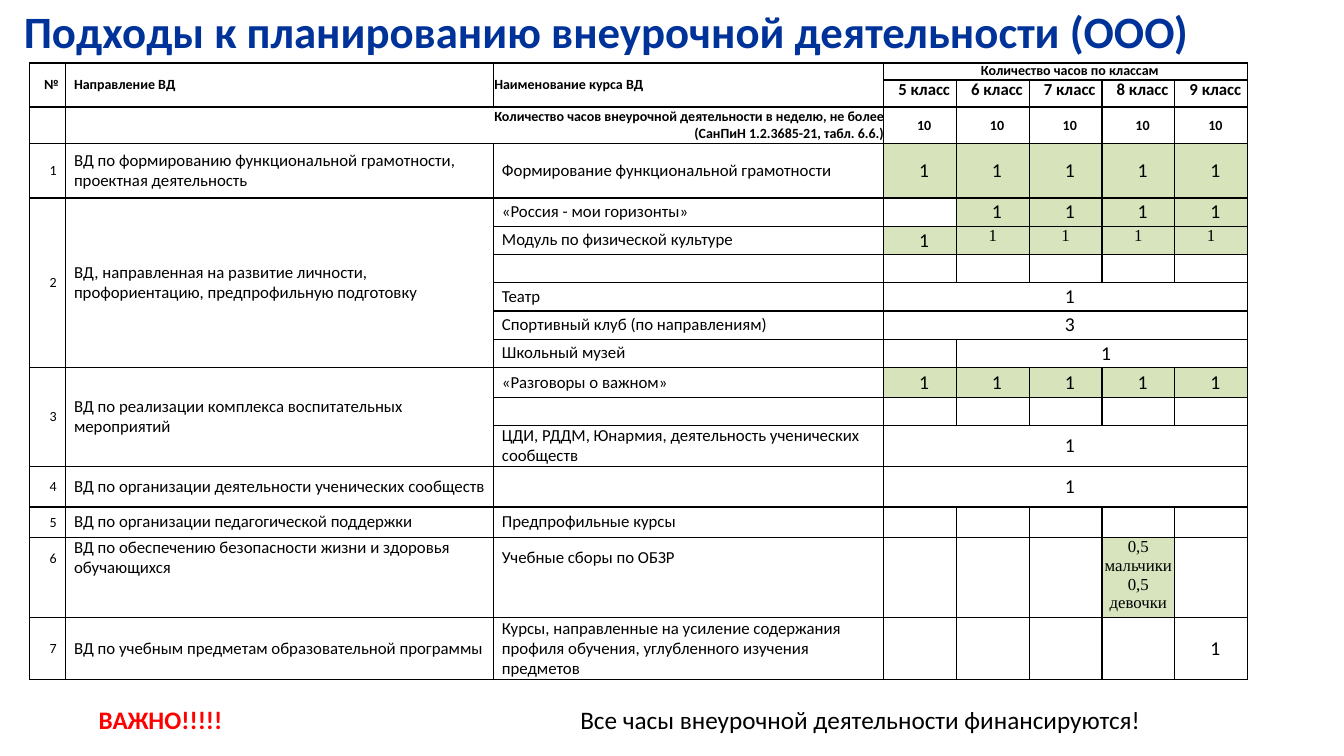
from lxml.etree import SubElement
from pptx import Presentation
from pptx.dml.color import RGBColor
from pptx.enum.text import MSO_ANCHOR as Anchor, MSO_AUTO_SIZE as Fit, PP_ALIGN as Align
from pptx.oxml.ns import qn
from pptx.util import Pt

COLORS = {"title": "003399", "text": "000000", "alert": "FF0000", "line": "000000",
          "plain": "FFFFFF", "mint": "D7E3BB", "olive": "D7E4BD"}
SERIF = "Times New Roman"
WIDTHS = [25.7, 305.7, 278.6] + [52] * 5
FIRST_GRADE = 3
HEADER_HEIGHTS = [12.2, 19.2, 26.4]
LAST = "7"
ONES = ["1"] * 5
EMPTY = [""] * 5

# height, number, direction, course, hours by class or (first class, shared hours), shade
COURSES = [
    (38.6, "1", "ВД по формированию функциональной грамотности,\nпроектная деятельность",
     "Формирование функциональной грамотности", ONES, "mint"),
    (20.2, "2", "ВД, направленная на развитие личности, профориентацию, предпрофильную подготовку",
     "«Россия - мои горизонты»", [""] + ["1"] * 4, "mint"),
    (20.2, None, None, "Модуль по физической культуре", ONES, "olive"),
    (20.2, None, None, "", EMPTY, "plain"),
    (20.2, None, None, "Театр", (0, "1"), "plain"),
    (20.2, None, None, "Спортивный клуб (по направлениям)", (0, "3"), "plain"),
    (20.2, None, None, "Школьный музей", (1, "1"), "plain"),
    (21.6, "3", "ВД по реализации комплекса воспитательных мероприятий",
     "«Разговоры о важном»", ONES, "mint"),
    (20, None, None, "", EMPTY, "plain"),
    (29.3, None, None, "ЦДИ, РДДМ, Юнармия, деятельность ученических сообществ", (0, "1"), "plain"),
    (28.8, "4", "ВД по организации деятельности ученических сообществ", "", (0, "1"), "plain"),
    (22, "5", "ВД по организации педагогической поддержки", "Предпрофильные курсы", EMPTY, "plain"),
    (57.2, "6", "ВД по обеспечению безопасности жизни и здоровья\nобучающихся",
     "Учебные сборы по ОБЗР", ["", "", "", "0,5 мальчики\n0,5 девочки", ""], "olive"),
    (44.2, LAST, "ВД по учебным предметам образовательной программы",
     "Курсы, направленные на усиление содержания профиля обучения, углубленного изучения предметов",
     [""] * 4 + ["1"], "plain"),
]


def write(frame, text, size=12, bold=False, color="text", font="Calibri",
          align=Align.LEFT, spacing=None):
    """Fill a text frame, one paragraph per line of text."""
    for index, line in enumerate(text.split("\n")):
        para = frame.add_paragraph() if index else frame.paragraphs[0]
        para.alignment = align
        if spacing:
            para.line_spacing = Pt(spacing)
        if not line:
            SubElement(para._p, qn("a:endParaRPr"), sz=str(size * 100))
            continue
        span = para.add_run()
        span.text = line
        span.font.name = font
        span.font.size = Pt(size)
        span.font.bold = bold
        span.font.color.rgb = RGBColor.from_string(COLORS[color])


class Page:
    """Holds the deck, its style and the current slide."""

    def __init__(self, width, height):
        self.deck = Presentation()
        self.deck.slide_width, self.deck.slide_height = Pt(width), Pt(height)
        self.page = self.deck.slides.add_slide(self.deck.slide_layouts[5])

    def place(self, box, left, top, width, height):
        """Move a box and remove its margins."""
        box.left, box.top, box.width, box.height = Pt(left), Pt(top), Pt(width), Pt(height)
        frame = box.text_frame
        frame.word_wrap = True
        frame.auto_size = Fit.NONE
        frame.vertical_anchor = Anchor.MIDDLE
        frame.margin_left = frame.margin_right = frame.margin_top = frame.margin_bottom = 0
        return frame

    def title(self, text, *area, **style):
        write(self.place(self.page.shapes.title, *area), text, **style)

    def label(self, text, *area, **style):
        box = self.page.shapes.add_textbox(0, 0, 0, 0)
        write(self.place(box, *area), text, **style)

    def table(self, left, top, widths, heights):
        """Add a plain ruled table."""
        frame = self.page.shapes.add_table(len(heights), len(widths), Pt(left), Pt(top),
                                           Pt(sum(widths)), Pt(sum(heights)))
        self.grid = frame.table
        self.grid.first_row = self.grid.horz_banding = False
        for column, width in zip(self.grid.columns, widths):
            column.width = Pt(width)
        for row, height in zip(self.grid.rows, heights):
            row.height = Pt(height)
        for cell in self.grid.iter_cells():
            self.rule(cell)

    def rule(self, cell):
        """Draw the four borders of a cell and clear its margins."""
        cell.margin_left = cell.margin_right = cell.margin_top = cell.margin_bottom = 0
        props = cell._tc.get_or_add_tcPr()
        for side in ("lnL", "lnR", "lnT", "lnB"):
            border = SubElement(props, qn(f"a:{side}"), w=str(Pt(1)))
            fill = SubElement(border, qn("a:solidFill"))
            SubElement(fill, qn("a:srgbClr"), val=COLORS["line"])
        cell.fill.solid()
        cell.fill.fore_color.rgb = RGBColor.from_string(COLORS["plain"])

    def cell(self, row, column, text, rows=1, columns=1, left=6, right=0, top=0,
             anchor=Anchor.MIDDLE, shade="plain", **style):
        """Write one cell, merged over rows and columns."""
        cell = self.grid.cell(row, column)
        if rows * columns > 1:
            cell.merge(self.grid.cell(row + rows - 1, column + columns - 1))
        cell.margin_left, cell.margin_right, cell.margin_top = Pt(left), Pt(right), Pt(top)
        cell.vertical_anchor = anchor
        cell.fill.fore_color.rgb = RGBColor.from_string(COLORS[shade])
        write(cell.text_frame, text, **style)


def add_header(page):
    """Write the three heading rows."""
    head = {"size": 10, "bold": True}
    page.cell(0, 0, "№", rows=2, left=0, right=5, align=Align.RIGHT, **head)
    page.cell(0, 1, "Направление ВД", rows=2, **head)
    page.cell(0, 2, "Наименование курса ВД", rows=2, left=0.5, **head)
    page.cell(0, FIRST_GRADE, "Количество часов по классам", columns=5,
              align=Align.CENTER, spacing=11.4, **head)
    page.cell(2, 0, "", size=10)
    page.cell(2, 1, "Количество часов внеурочной деятельности в неделю, не более\n"
              "(СанПиН 1.2.3685-21, табл. 6.6.)", columns=2, align=Align.RIGHT, **head)
    for grade in range(5):
        column = FIRST_GRADE + grade
        page.cell(1, column, f"{grade + 5} класс", bold=True, align=Align.CENTER,
                  anchor=Anchor.TOP, spacing=14.2)
        page.cell(2, column, "10", align=Align.CENTER, **head)


def add_hours(page, row, hours, shade):
    """Write the hours of one course."""
    if isinstance(hours, tuple):
        start, shared = hours
        page.cell(row, FIRST_GRADE + start, shared, columns=5 - start, size=14, align=Align.CENTER)
        hours = [""] * start
    for grade, value in enumerate(hours):
        look = {"size": 14 if value else 10}
        if value and shade == "olive" and grade:
            look = {"size": 12, "font": SERIF, "left": 0, "anchor": Anchor.TOP}
        page.cell(row, FIRST_GRADE + grade, value, align=Align.CENTER,
                  shade=shade if value else "plain", **look)


def add_courses(page):
    """Write the numbered directions and their courses."""
    for index, (_, number, direction, course, hours, shade) in enumerate(COURSES):
        row = index + len(HEADER_HEIGHTS)
        upper = {"anchor": Anchor.TOP} if number == "6" else {}
        if number:
            rows = 1
            while index + rows < len(COURSES) and COURSES[index + rows][1] is None:
                rows += 1
            page.cell(row, 0, number, rows=rows, left=0, right=6.5, size=10, align=Align.RIGHT,
                      top=9 if upper else 0, **upper)
            page.cell(row, 1, direction, rows=rows, right=20 if rows > 1 else 0,
                      spacing=14.4, **upper)
        page.cell(row, 2, course, size=12 if course else 10, spacing=14.4,
                  top=7.5 if upper else 0, **upper)
        add_hours(page, row, hours, shade)


def main():
    page = Page(960, 540)
    page.title("Подходы к планированию внеурочной деятельности (ООО)", 17, 1.5, 927, 40,
               size=32, bold=True, color="title")
    page.table(21.2, 45, WIDTHS, HEADER_HEIGHTS + [course[0] for course in COURSES])
    add_header(page)
    add_courses(page)
    page.label("ВАЖНО!!!!!", 70.5, 500, 120, 28, size=18, bold=True, color="alert")
    page.label("Все часы внеурочной деятельности финансируются!", 394, 500, 420.5, 28,
               size=18, align=Align.RIGHT)
    page.deck.save("out.pptx")


if __name__ == "__main__":
    main()
